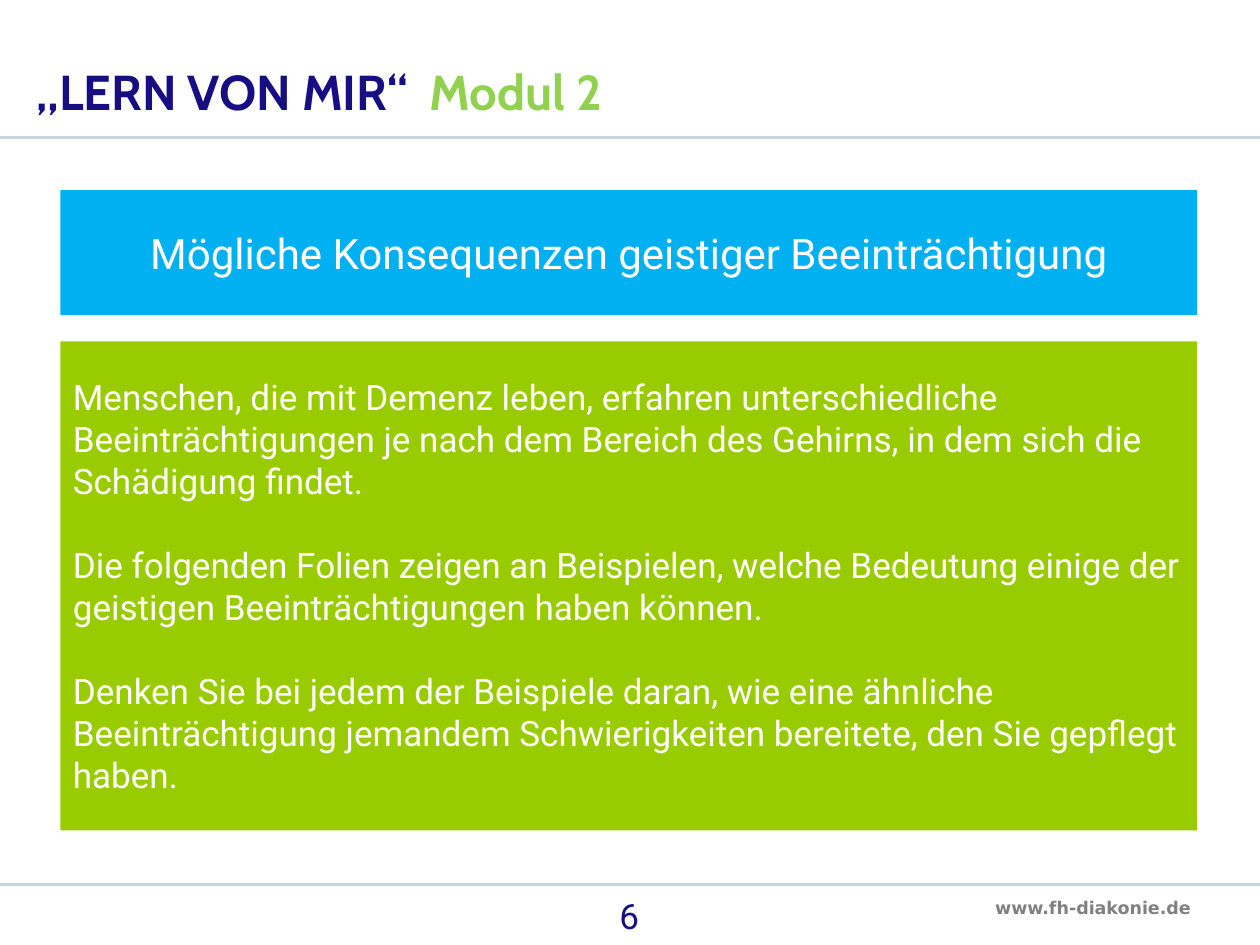
from lxml.etree import SubElement
from pptx import Presentation
from pptx.dml.color import RGBColor
from pptx.enum.shapes import MSO_CONNECTOR, MSO_SHAPE
from pptx.enum.text import MSO_ANCHOR, MSO_AUTO_SIZE, PP_ALIGN
from pptx.oxml.ns import qn
from pptx.util import Inches, Pt

NAVY = RGBColor(0x17, 0x0E, 0x83)
LIGHT_GREEN = RGBColor(0x92, 0xD0, 0x50)
GREEN = RGBColor(0x99, 0xCC, 0x00)
BLUE = RGBColor(0x00, 0xB0, 0xF0)
WHITE = RGBColor(0xFF, 0xFF, 0xFF)
GRAY = RGBColor(0x80, 0x80, 0x80)
RULE = RGBColor(0xC8, 0xD2, 0xDC)

WIDTH, HEIGHT = 10, 7.5
PANEL_LEFT, PANEL_WIDTH = 0.48, 9.02

HEADING = "Mögliche Konsequenzen geistiger Beeinträchtigung"
BODY = [
    "Menschen, die mit Demenz leben, erfahren unterschiedliche "
    "Beeinträchtigungen je nach dem Bereich des Gehirns, in dem sich die "
    "Schädigung findet.",
    "Die folgenden Folien zeigen an Beispielen, welche Bedeutung einige der "
    "geistigen Beeinträchtigungen haben können.",
    "Denken Sie bei jedem der Beispiele daran, wie eine ähnliche "
    "Beeinträchtigung jemandem Schwierigkeiten bereitete, den Sie gepflegt "
    "haben.",
]


def set_font(font, name, size, color, bold=False):
    font.name = name
    font.size = Pt(size)
    font.bold = bold
    font.color.rgb = color


def fill_title(s):
    sp = s.shapes.title
    sp.left, sp.top = Inches(0.19), Inches(0.43)
    sp.width, sp.height = Inches(6.67), Inches(0.58)
    tf = sp.text_frame
    tf.auto_size = MSO_AUTO_SIZE.NONE
    tf.vertical_anchor = MSO_ANCHOR.BOTTOM
    p = tf.paragraphs[0]
    p.alignment = PP_ALIGN.LEFT
    p.line_spacing = 0.9
    for text, color in (("„LERN VON MIR“  ", NAVY), ("Modul 2", LIGHT_GREEN)):
        r = p.add_run()
        r.text = text
        set_font(r.font, "Cabin", 28, color, True)


def add_rule(s, y):
    line = s.shapes.add_connector(
        MSO_CONNECTOR.STRAIGHT, 0, Inches(y), Inches(WIDTH), Inches(y))
    line.line.color.rgb = RULE
    line.line.width = Pt(1.5)
    SubElement(line.element.spPr, qn("a:effectLst"))


def add_panel(s, top, height, fill, paragraphs, size, align):
    sp = s.shapes.add_shape(
        MSO_SHAPE.RECTANGLE, Inches(PANEL_LEFT), Inches(top),
        Inches(PANEL_WIDTH), Inches(height))
    sp.shadow.inherit = False
    sp.fill.solid()
    sp.fill.fore_color.rgb = fill
    sp.line.fill.background()
    tf = sp.text_frame
    tf.word_wrap = True
    tf.vertical_anchor = MSO_ANCHOR.MIDDLE
    tf.text = "\n".join(paragraphs)
    for i, p in enumerate(tf.paragraphs):
        p.alignment = align
        p.space_before = Pt(1.2 * size if i else 0)
        set_font(p.font, "Roboto", size, WHITE)


def add_label(s, box, text, font, size, color, align, bold=False, wrap=True):
    tf = s.shapes.add_textbox(*map(Inches, box)).text_frame
    tf.word_wrap = wrap
    p = tf.paragraphs[0]
    p.text = text
    p.alignment = align
    set_font(p.font, font, size, color, bold)


def main():
    prs = Presentation()
    prs.slide_width, prs.slide_height = Inches(WIDTH), Inches(HEIGHT)
    s = prs.slides.add_slide(prs.slide_layouts[5])
    fill_title(s)
    for y in (1.09, 7.02):
        add_rule(s, y)
    add_panel(s, 2.71, 3.88, GREEN, BODY, 20, PP_ALIGN.LEFT)
    add_panel(s, 1.51, 0.99, BLUE, [HEADING], 24, PP_ALIGN.CENTER)
    add_label(s, (3.83, 7.05, 2.33, 0.45), "6", "Roboto", 20, NAVY,
              PP_ALIGN.CENTER)
    add_label(s, (7.8, 7.07, 1.78, 0.27), "www.fh-diakonie.de", "DejaVu Sans",
              10, GRAY, PP_ALIGN.LEFT, bold=True, wrap=False)
    prs.save("out.pptx")


if __name__ == "__main__":
    main()
